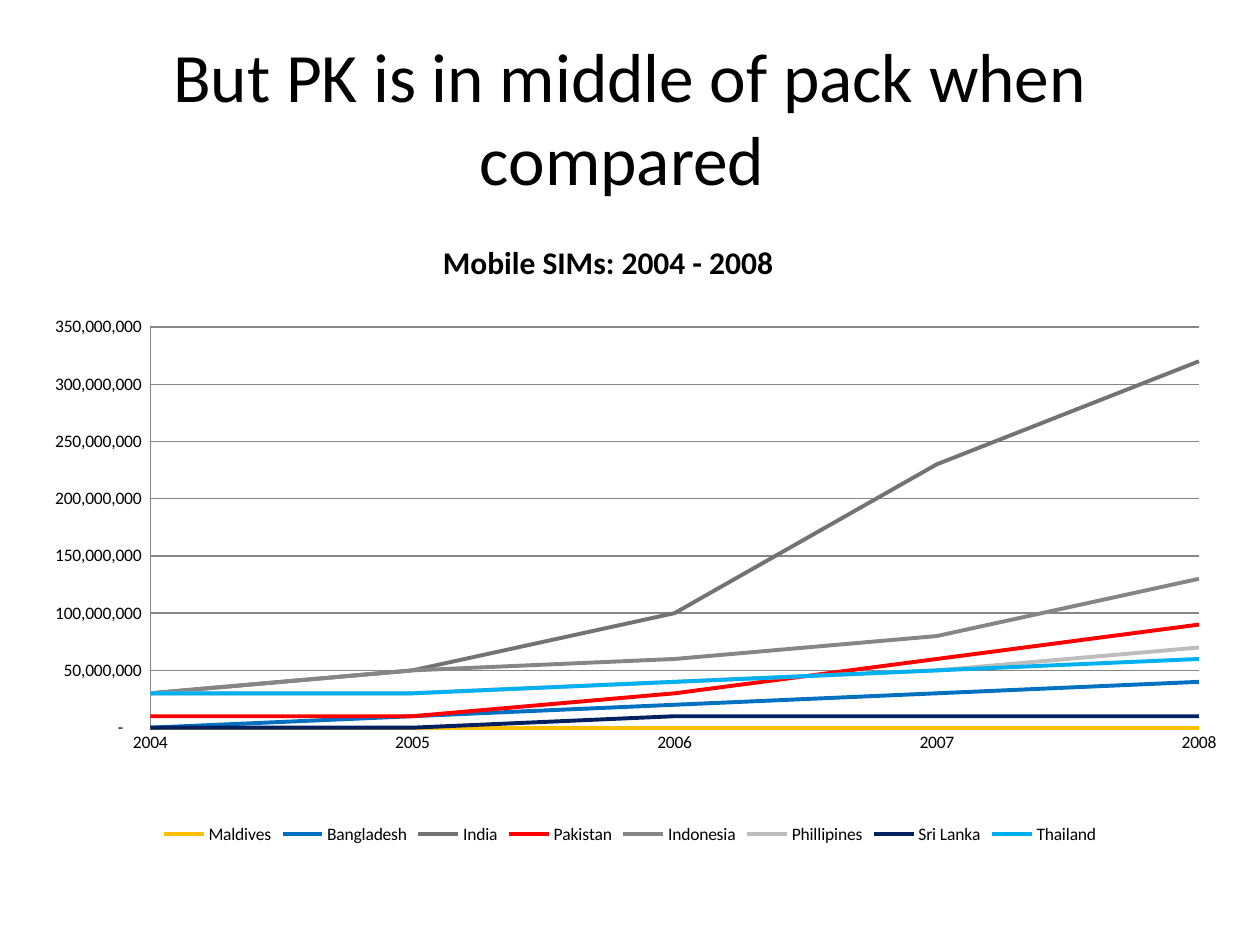
from dataclasses import dataclass
import pptx
import pptx.chart.data
import pptx.dml.color
import pptx.enum.chart
import pptx.enum.text
import pptx.oxml
import pptx.oxml.ns
import pptx.util

Cm = pptx.util.Cm
Pt = pptx.util.Pt
FONT = "Calibri"
INK = {
    "black": "000000", "axis": "868686", "gold": "FFC000", "blue": "0070C0",
    "dark": "737373", "red": "FF0000", "mid": "868686", "pale": "BDBDBD",
    "navy": "002060", "sky": "00B0F0",
}
YEARS = ["2004", "2005", "2006", "2007", "2008"]
MILLION = 1_000_000


@dataclass
class Land:
    name: str
    ink: str
    sims: list[int]


LANDS = [
    Land("Maldives", "gold", [0, 0, 0, 0, 0]),
    Land("Bangladesh", "blue", [0, 10, 20, 30, 40]),
    Land("India", "dark", [30, 50, 100, 230, 320]),
    Land("Pakistan", "red", [10, 10, 30, 60, 90]),
    Land("Indonesia", "mid", [30, 50, 60, 80, 130]),
    Land("Phillipines", "pale", [30, 30, 40, 50, 70]),
    Land("Sri Lanka", "navy", [0, 0, 10, 10, 10]),
    Land("Thailand", "sky", [30, 30, 40, 50, 60]),
]


def tint(key: str) -> pptx.dml.color.RGBColor:
    return pptx.dml.color.RGBColor.from_string(INK[key])


def style(font, size: float, bold: bool = False, ink: str = "black") -> None:
    font.name = FONT
    font.size = Pt(size)
    font.bold = bold
    font.color.rgb = tint(ink)


def write(frame, text: str, *, size: float, bold: bool = False, ink: str = "black") -> None:
    line = frame.paragraphs[0]
    line.alignment = pptx.enum.text.PP_ALIGN.CENTER
    run = line.add_run()
    run.text = text
    style(run.font, size, bold, ink)


def stroke(line, ink: str, width: float) -> None:
    line.color.rgb = tint(ink)
    line.width = Pt(width)


def place(node, spot: int, **modes) -> None:
    for old in node.findall(pptx.oxml.ns.qn("c:layout")):
        node.remove(old)
    body = "".join(f'<c:{key} val="{val}"/>' for key, val in modes.items())
    node.insert(spot, pptx.oxml.parse_xml(
        f'<c:layout {pptx.oxml.ns.nsdecls("c")}><c:manualLayout>{body}'
        "</c:manualLayout></c:layout>"))


def head(slide) -> None:
    box = slide.shapes.add_textbox(Cm(1.27), Cm(0.76), Cm(22.86), Cm(3.18))
    frame = box.text_frame
    frame.word_wrap = True
    frame.vertical_anchor = pptx.enum.text.MSO_ANCHOR.MIDDLE
    write(frame, "But PK is in middle of pack when compared ", size=39.6)


def axes(chart) -> None:
    kinds = pptx.enum.chart
    for axis in (chart.category_axis, chart.value_axis):
        axis.major_tick_mark = kinds.XL_TICK_MARK.NONE
        axis.minor_tick_mark = kinds.XL_TICK_MARK.NONE
        style(axis.tick_labels.font, 10)
        stroke(axis.format.line, "axis", 0.75)
    chart.category_axis.has_major_gridlines = False
    axis = chart.value_axis
    axis.has_major_gridlines = True
    stroke(axis.major_gridlines.format.line, "axis", 0.75)
    axis.minimum_scale = 0
    axis.maximum_scale = 350 * MILLION
    axis.major_unit = 50 * MILLION
    axis.tick_labels.number_format = r'_(* #,##0_);_(* \(#,##0\);_(* "-"??_);_('
    axis.tick_labels.number_format_is_linked = False


def graph(slide) -> None:
    kinds = pptx.enum.chart
    data = pptx.chart.data.CategoryChartData(number_format="#,##0")
    data.categories = YEARS
    for land in LANDS:
        data.add_series(land.name, [n * MILLION for n in land.sims])
    chart = slide.shapes.add_chart(
        kinds.XL_CHART_TYPE.LINE, Cm(0.85), Cm(3.81), Cm(23.7), Cm(13.31), data).chart
    style(chart.font, 10)
    chart.plots[0].vary_by_categories = False
    for land, series in zip(LANDS, chart.plots[0].series):
        series.smooth = False
        series.marker.style = kinds.XL_MARKER_STYLE.NONE
        stroke(series.format.line, land.ink, 2.25)
    axes(chart)
    chart.has_legend = True
    chart.legend.position = kinds.XL_LEGEND_POSITION.BOTTOM
    chart.legend.include_in_layout = False
    style(chart.legend.font, 10)
    chart.has_title = True
    write(chart.chart_title.text_frame, "Mobile SIMs: 2004 - 2008", size=18, bold=True)
    root = chart._chartSpace
    place(root.xpath("c:chart/c:title")[0], 1,
          xMode="edge", yMode="edge", x=0.336, y=0.07)
    place(root.xpath("c:chart/c:plotArea")[0], 0, layoutTarget="inner",
          xMode="edge", yMode="edge", x=0.092, y=0.209, w=0.892, h=0.607)
    scale = root.xpath(".//c:valAx")[0]
    for old in scale.xpath("c:crossBetween"):
        scale.remove(old)
    scale.xpath("c:crosses")[0].addnext(pptx.oxml.parse_xml(
        f'<c:crossBetween {pptx.oxml.ns.nsdecls("c")} val="midCat"/>'))


def main() -> None:
    deck = pptx.Presentation()
    deck.slide_width = Cm(25.4)
    deck.slide_height = Cm(19.05)
    slide = deck.slides.add_slide(deck.slide_layouts[6])
    head(slide)
    graph(slide)
    deck.save("out.pptx")


if __name__ == "__main__":
    main()
